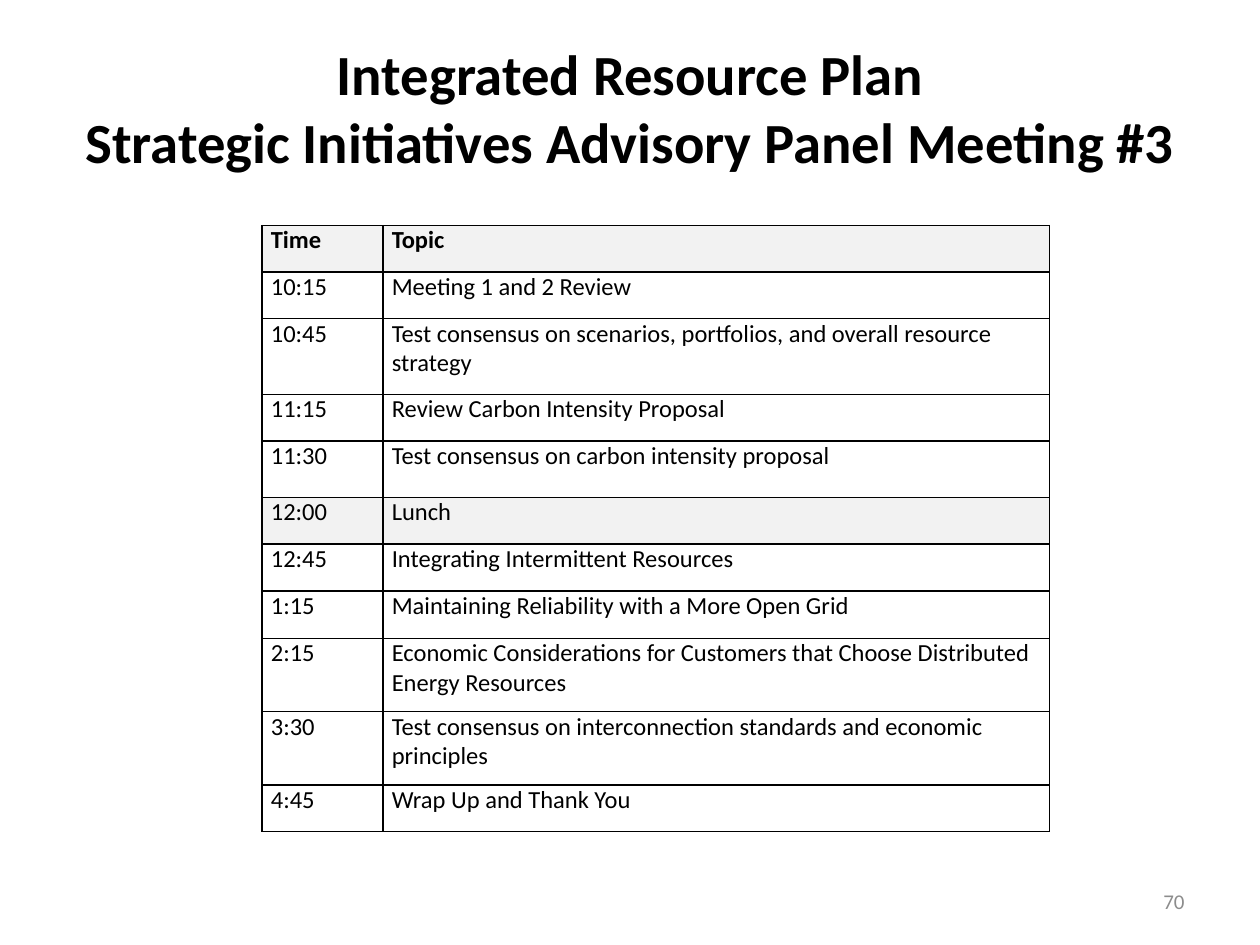
from lxml import etree
from pptx import Presentation
from pptx import util as u
from pptx.dml.color import RGBColor
from pptx.enum import text
from pptx.oxml.ns import qn

BLACK = RGBColor(0x00, 0x00, 0x00)
WHITE = RGBColor(0xFF, 0xFF, 0xFF)
SHADE = RGBColor(0xF2, 0xF2, 0xF2)
GRAY = RGBColor(0x8C, 0x8C, 0x8C)

TITLE = "Integrated Resource Plan\vStrategic Initiatives Advisory Panel Meeting #3"
AGENDA = [
    ("Time", "Topic", 0.37),
    ("10:15", "Meeting 1 and 2 Review", 0.37),
    ("10:45", "Test consensus on scenarios, portfolios, and overall resource strategy", 0.6),
    ("11:15", "Review Carbon Intensity Proposal", 0.37),
    ("11:30", "Test consensus on carbon intensity proposal", 0.45),
    ("12:00", "Lunch", 0.37),
    ("12:45", "Integrating Intermittent Resources", 0.37),
    ("1:15", "Maintaining Reliability with a More Open Grid", 0.38),
    ("2:15", "Economic Considerations for Customers that Choose Distributed Energy Resources", 0.58),
    ("3:30", "Test consensus on interconnection standards and economic principles", 0.58),
    ("4:45", "Wrap Up and Thank You", 0.37),
]
COLUMN_WIDTHS = (0.96, 5.29)
SHADED_ROWS = {"Time", "12:00"}


def set_attributes(target, values):
    """Set every attribute named in a dict of format values."""
    for name, value in values.items():
        setattr(target, name, value)


def format_text(paragraph, size, color, bold=False, alignment=text.PP_ALIGN.LEFT):
    """Format a paragraph and all of its runs."""
    paragraph.alignment = alignment
    for run in paragraph.runs:
        set_attributes(run.font, {"name": "Calibri", "size": u.Pt(size), "bold": bold})
        run.font.color.rgb = color


def fill_box(shape, box, content, **style):
    """Place a text shape and give it middle-anchored text."""
    left, top, width, height = map(u.Inches, box)
    set_attributes(shape, {"left": left, "top": top, "width": width, "height": height})
    frame = shape.text_frame
    frame.text = content
    set_attributes(frame, {
        "word_wrap": True,
        "auto_size": text.MSO_AUTO_SIZE.NONE,
        "vertical_anchor": text.MSO_ANCHOR.MIDDLE,
    })
    format_text(frame.paragraphs[0], **style)


def add_borders(cell, width=1):
    """Draw a solid black line on all four sides of a cell."""
    properties = cell._tc.get_or_add_tcPr()
    for index, side in enumerate(("a:lnL", "a:lnR", "a:lnT", "a:lnB")):
        line = etree.Element(qn(side), w=str(u.Pt(width)))
        solid = etree.SubElement(line, qn("a:solidFill"))
        etree.SubElement(solid, qn("a:srgbClr"), val=str(BLACK))
        properties.insert(index, line)


def format_cell(cell, content, bold, shaded):
    """Write one agenda cell with its fill, margins and borders."""
    cell.text = content
    set_attributes(cell, {
        "margin_left": u.Inches(0.07),
        "margin_right": u.Inches(0.07),
        "margin_top": 0,
        "margin_bottom": 0,
        "vertical_anchor": text.MSO_ANCHOR.TOP,
    })
    format_text(cell.text_frame.paragraphs[0], 14, BLACK, bold)
    cell.fill.solid()
    cell.fill.fore_color.rgb = SHADE if shaded else WHITE
    add_borders(cell)


def add_agenda(slide):
    """Add the agenda table."""
    height = sum(row_height for _, _, row_height in AGENDA)
    table = slide.shapes.add_table(
        len(AGENDA), len(COLUMN_WIDTHS), u.Inches(2.08), u.Inches(1.79),
        u.Inches(sum(COLUMN_WIDTHS)), u.Inches(height)).table
    set_attributes(table, {"first_row": False, "horz_banding": False})
    for column, width in zip(table.columns, COLUMN_WIDTHS):
        column.width = u.Inches(width)
    for index, (time, topic, row_height) in enumerate(AGENDA):
        row = table.rows[index]
        row.height = u.Inches(row_height)
        for cell, content in zip(row.cells, (time, topic)):
            format_cell(cell, content, index == 0, time in SHADED_ROWS)


def main():
    """Build the meeting agenda slide."""
    presentation = Presentation()
    set_attributes(presentation, {"slide_width": u.Inches(10), "slide_height": u.Inches(7.5)})
    slide = presentation.slides.add_slide(presentation.slide_layouts[5])
    fill_box(slide.shapes.title, (0.5, 0.3, 9, 1.1), TITLE,
             size=32.4, color=BLACK, bold=True, alignment=text.PP_ALIGN.CENTER)
    add_agenda(slide)
    fill_box(slide.shapes.add_textbox(0, 0, 0, 0), (7.17, 6.95, 2.33, 0.4), "70",
             size=12, color=GRAY, alignment=text.PP_ALIGN.RIGHT)
    presentation.save("out.pptx")


if __name__ == "__main__":
    main()
